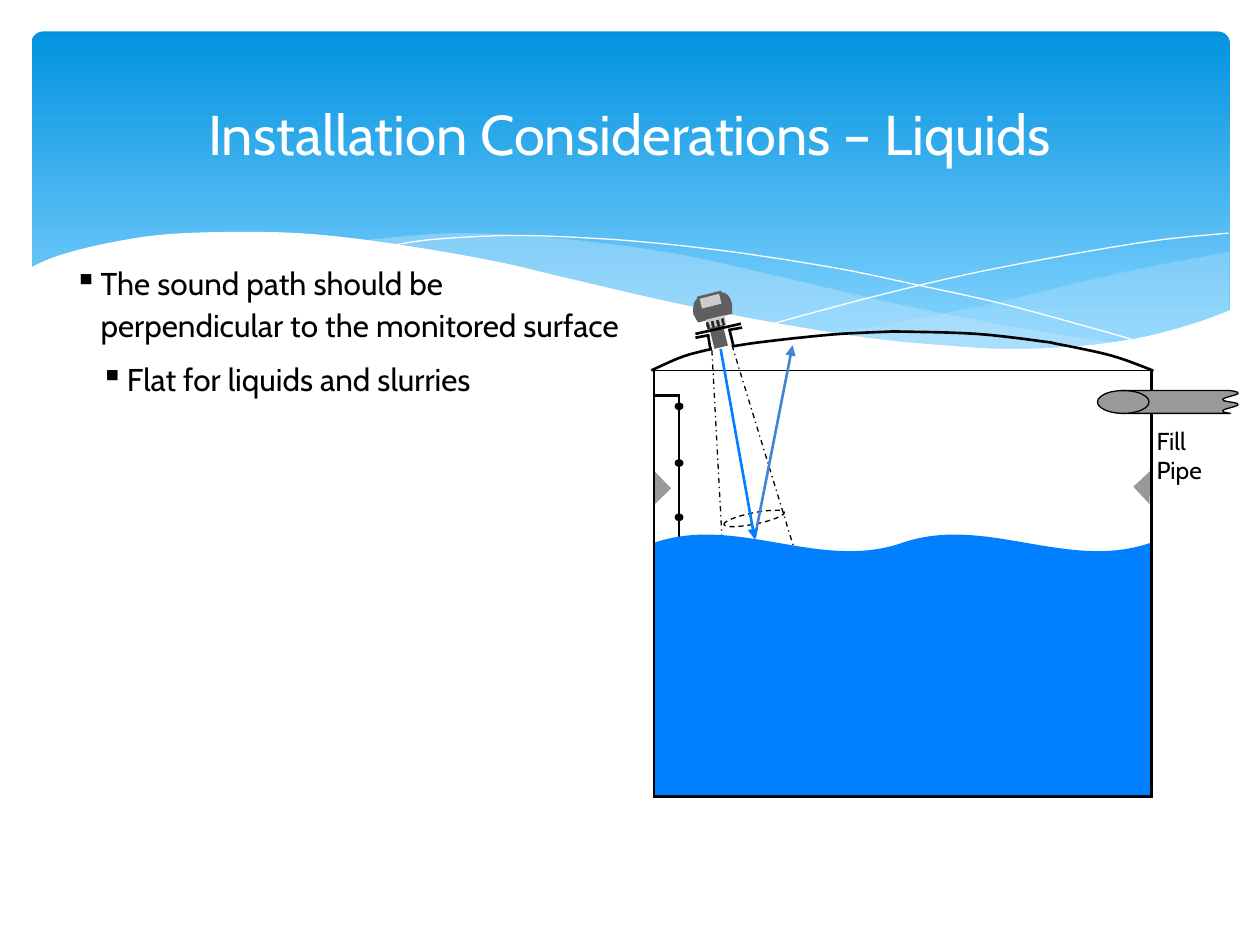
"""Build a slide on mounting a level sensor above a liquid tank."""
from copy import deepcopy
from dataclasses import dataclass

from lxml import etree
from pptx import Presentation
from pptx.dml.color import RGBColor
from pptx.enum.dml import MSO_LINE
from pptx.enum.shapes import MSO_CONNECTOR, MSO_SHAPE
from pptx.enum.text import MSO_ANCHOR, PP_ALIGN
from pptx.oxml.ns import qn
from pptx.util import Pt

RECT, ROUND = MSO_SHAPE.RECTANGLE, MSO_SHAPE.ROUNDED_RECTANGLE
OVAL, WAVE = MSO_SHAPE.OVAL, MSO_SHAPE.DOUBLE_WAVE
WEDGE = MSO_SHAPE.RIGHT_TRIANGLE
STRAIGHT = MSO_CONNECTOR.STRAIGHT
DASH, DASH_DOT = MSO_LINE.DASH, MSO_LINE.DASH_DOT
MIDDLE, TOP = MSO_ANCHOR.MIDDLE, MSO_ANCHOR.TOP
CENTER, LEFT = PP_ALIGN.CENTER, PP_ALIGN.LEFT


@dataclass(frozen=True)
class Theme:
    """Hold the colours, font, type sizes and line widths."""
    font: str = "Cabin"
    title: int = 32
    body: int = 18
    label: int = 14
    thin: float = 0.75
    thick: float = 1.5
    white: str = "FFFFFF"
    black: str = "000000"
    haze: str = "C6E7FC"
    housing: str = "5F5F5F"
    display: str = "CCCCCC"
    steel: str = "999999"
    liquid: str = "0080FF"
    echo: str = "4584D3"
    sky: tuple = ((0, "0293E0"), (0.9, "83D3FE"))
    metal: tuple = ((0, "DDDDDD"), (0.5, "1C1C1C"), (1, "DDDDDD"))


THEME = Theme()
TILT = 345.9
HAZE_RIGHT = (
    [(475.9, 190.8), (508.3, 185), (542.2, 178.6), (579.6, 170.6), (619.9, 160.6), (663.1, 151.2), (702.4, 144)],
    [(702.4, 177.8), (693.4, 181.4), (668.2, 189.4), (645.8, 193.7), (614.9, 198), (578.2, 200.2),
     (545, 198.7), (507.6, 195.1), (475.9, 190.8)])
HAZE_MIDDLE = (
    [(205.9, 137.5), (236, 134.6), (259.9, 133.2), (287.3, 133.9), (318.2, 136.1), (361.4, 141.1),
     (399.6, 147.6), (452.9, 159.8), (508.3, 172.8), (558, 182.9), (602.6, 190.8), (643, 196.6)],
    [(643, 196.6), (617, 199.4), (581, 200.2), (538.6, 198.7), (489.6, 193), (432.7, 183.6),
     (381.6, 172.8), (323.3, 159.8), (275.8, 149), (232.6, 141.1), (205.9, 137.5)])
FALLING_LINE = [(222.5, 140.4), (247.7, 136.8), (288.7, 134.6), (324, 135.4), (367.2, 138.2), (419, 144),
                (478.8, 153.4), (523.4, 162.7), (572.4, 173.5), (625.7, 187.9), (653, 195.8)]
RISING_LINE = [(441.4, 185), (500.4, 169.2), (558.7, 155.5), (623.5, 143.3), (665.3, 136.8), (702, 133.2)]
PAGE_EDGE = [(16.5, 153.4), (33.1, 146.2), (61.2, 139), (95, 133.9), (139, 132.5), (180, 133.9),
             (227.5, 139.7), (281.5, 149), (321.8, 158.4), (380.9, 172.1), (434.2, 182.9), (495.4, 193),
             (547.9, 198), (582.5, 199.4), (621.4, 197.3), (655.2, 192.2), (684, 184.3), (703.4, 177.1)]
ROOF = ([(372.2, 211.7), (390.2, 203.8), (406.8, 199.4)],
        [(418.3, 198), (432.7, 195.8), (456.5, 193)],
        [(456.5, 193), (480.2, 190.8), (510.5, 189.4)],
        [(509, 189.4), (558, 190.8), (601.2, 195.8)],
        [(600.5, 195.8), (634.3, 203), (658.8, 211.7)])


def smooth(points, steps=6):
    """Return points along a Catmull-Rom curve through the given ones."""
    ends = [points[0], *points, points[-1]]
    curve = [points[0]]
    for a, b, c, d in zip(ends, ends[1:], ends[2:], ends[3:]):
        for step in range(1, steps + 1):
            t = step / steps
            curve.append(tuple(
                (2 * q + (r - p) * t + (2 * p - 5 * q + 4 * r - s) * t ** 2
                 + (3 * q - p - 3 * r + s) * t ** 3) / 2
                for p, q, r, s in zip(a, b, c, d)))
    return curve


def paint(shape, fill=None, line=None, width=THEME.thin, dash=None, alpha=None):
    """Give a shape its fill and outline, without a shadow."""
    shape.shadow.inherit = False
    if fill is None:
        shape.fill.background()
    elif isinstance(fill, str):
        shape.fill.solid()
        shape.fill.fore_color.rgb = RGBColor.from_string(fill)
    else:
        shape.fill.gradient()
        stop_list = shape._element.spPr.find(".//" + qn("a:gsLst"))
        for _ in fill[2:]:
            stop_list.append(deepcopy(stop_list[-1]))
        for stop, (position, color) in zip(shape.fill.gradient_stops, fill):
            stop.position = position
            stop.color.rgb = RGBColor.from_string(color)
    if alpha:
        color = shape._element.spPr.find(qn("a:solidFill"))[0]
        etree.SubElement(color, qn("a:alpha"), val=str(alpha * 1000))
    if line:
        ink(shape.line, line, width, dash)
    else:
        shape.line.fill.background()


def ink(line, color, width, dash):
    """Set the colour, width and dash of a line."""
    line.color.rgb = RGBColor.from_string(color)
    line.width = Pt(width)
    if dash:
        line.dash_style = dash


def add_preset(page, kind, box, turn=0, adjust=(), **style):
    """Add a preset shape."""
    shape = page.shapes.add_shape(kind, *map(Pt, box))
    shape.rotation = turn
    for index, value in enumerate(adjust):
        shape.adjustments[index] = value
    paint(shape, **style)


def add_outline(page, points, closed=True, **style):
    """Add a freeform through the points."""
    start, *rest = [(Pt(x), Pt(y)) for x, y in points]
    builder = page.shapes.build_freeform(*start, scale=1.0)
    builder.add_line_segments(rest, close=closed)
    paint(builder.convert_to_shape(), **style)


def add_line(page, start, end, color=THEME.black, width=THEME.thick, dash=None, arrow=False):
    """Add a straight connector."""
    connector = page.shapes.add_connector(STRAIGHT, *map(Pt, (*start, *end)))
    ink(connector.line, color, width, dash)
    if arrow:
        etree.SubElement(connector.line._get_or_add_ln(), qn("a:tailEnd"), type="triangle")
    etree.SubElement(connector._element.spPr, qn("a:effectLst"))


def add_text(page, box, lines, size, color, inset=None, anchor=TOP, bullets=False, **formats):
    """Add a wrapped text box with optional stepped bullets."""
    frame = page.shapes.add_textbox(*map(Pt, box)).text_frame
    settings = {"word_wrap": True, "vertical_anchor": anchor}
    if inset is not None:
        settings.update({f"margin_{side}": Pt(inset) for side in ("left", "top", "right", "bottom")})
    for name, value in settings.items():
        setattr(frame, name, value)
    for index, text in enumerate(lines):
        para = frame.add_paragraph() if index else frame.paragraphs[0]
        if bullets:
            properties = para._p.get_or_add_pPr()
            properties.set("marL", str(Pt(15 * (index + 1))))
            properties.set("indent", str(Pt(-15)))
            tint = etree.SubElement(properties, qn("a:buClr"))
            etree.SubElement(tint, qn("a:srgbClr"), val=color)
            etree.SubElement(properties, qn("a:buChar"), char="▪")
        for name, value in formats.items():
            setattr(para, name, value)
        span = para.add_run()
        span.text = text
        for name, value in {"name": THEME.font, "size": Pt(size)}.items():
            setattr(span.font, name, value)
        span.font.color.rgb = RGBColor.from_string(color)


def add_header(page):
    """Draw the blue banner with its waves."""
    add_preset(page, ROUND, (18, 18, 684.7, 194.4), adjust=[0.034], fill=THEME.sky)
    banner = page.shapes[-1]
    banner.fill.gradient_angle = 270
    for (upper, lower), alpha in ((HAZE_RIGHT, 29), (HAZE_MIDDLE, 40)):
        add_outline(page, smooth(upper) + smooth(lower), fill=THEME.haze, alpha=alpha)
    for points in (FALLING_LINE, RISING_LINE):
        add_outline(page, smooth(points), closed=False, line=THEME.white, width=0)
    add_outline(page, smooth(PAGE_EDGE) + [(703.4, 236.9), (16.5, 236.9)], fill=THEME.white)


def add_sensor(page):
    """Draw the tilted sensor and its nozzle."""
    add_preset(page, RECT, (406.1, 181.4, 7.9, 17.3), TILT, fill=THEME.housing)
    add_outline(page, [(396, 179.3), (398.9, 184.3), (418.3, 179.3), (418.3, 173.5)], fill=THEME.housing)
    add_preset(page, RECT, (403.9, 181.4, 10.8, 5), TILT, fill=THEME.display)
    for rib in range(4):
        add_preset(page, RECT, (403.9 + 2.9 * rib, 184.3 - 0.7 * rib, 1.4, 3.6), TILT, fill=THEME.metal)
        page.shapes[-1].fill.gradient_angle = 0
    add_outline(page, [(418.3, 173.5), (416.9, 169.9), (396, 175.7), (396, 179.3)], fill=THEME.housing)
    add_preset(page, ROUND, (396, 168.5, 21.6, 10.1), TILT, [0.5], fill=THEME.housing)
    add_preset(page, RECT, (400.3, 169.2, 11.5, 5.8), TILT, fill=THEME.display)
    add_preset(page, ROUND, (398.2, 167.8, 14.4, 1.4), TILT, [0.3], fill=THEME.housing)
    for start, end in (((397.4, 190.8), (423.4, 185)), ((397.4, 193), (405.4, 191.5)),
                       ((416.2, 188.6), (424.1, 187.2)), ((404.6, 191.5), (406.1, 200.2)),
                       ((416.9, 188.6), (419, 197.3))):
        add_line(page, start, end)


def add_tank(page):
    """Draw the tank, its fittings, the liquid and the sound path."""
    add_line(page, (373, 211.7), (659.5, 211.7), width=THEME.thin)
    for points in ROOF:
        add_outline(page, smooth(points), closed=False, line=THEME.black, width=THEME.thick)
    add_line(page, (373.7, 455), (658.8, 455))
    for start, end in (((406.8, 200.2), (419.8, 441.4)), ((418.3, 197.3), (488.9, 428.4))):
        add_line(page, start, end, width=THEME.thin, dash=DASH_DOT)
    add_preset(page, OVAL, (413.3, 293, 35.3, 6.5), 348.7, line=THEME.black, dash=DASH)
    add_line(page, (388.1, 225.4), (388.1, 443.5))
    add_line(page, (388.8, 226.1), (373.7, 226.1))
    for top in (293.8, 262.8, 230.4):
        add_preset(page, OVAL, (385.9, top, 4.3, 3.6), fill=THEME.black, line=THEME.black)
    for left, turn in ((367.2, 225.9), (650.2, 47)):
        add_preset(page, WEDGE, (left, 272.2, 13.7, 13), turn, fill=THEME.steel)
    add_preset(page, WAVE, (373.7, 305.3, 283.7, 75.6), adjust=(0.065, 0), fill=THEME.liquid)
    add_preset(page, RECT, (374.4, 362.2, 284.4, 92.2), fill=THEME.liquid)
    add_line(page, (431.3, 307.4), (452.9, 197.3), THEME.echo, arrow=True)
    for wall in (658.1, 373.7):
        add_line(page, (wall, 211.7), (wall, 455.8))
    add_preset(page, WAVE, (665.3, 193.7, 13, 72), 270, (0.065, 0), fill=THEME.steel, line=THEME.black)
    add_preset(page, OVAL, (627.1, 223.2, 29.5, 13), fill=THEME.steel, line=THEME.black)
    add_line(page, (411.8, 199.4), (431.3, 308.2), THEME.liquid, arrow=True)


def main():
    """Build and save the deck."""
    deck = Presentation()
    deck.slide_width, deck.slide_height = Pt(720), Pt(540)
    page = deck.slides.add_slide(deck.slide_layouts[6])
    add_header(page)
    add_sensor(page)
    add_tank(page)
    add_text(page, (42.5, 149, 316.8, 344),
             ["The sound path should be perpendicular to the monitored surface", "Flat for liquids and slurries"],
             THEME.body, THEME.black, inset=0, bullets=True, line_spacing=1.1, space_after=Pt(7))
    add_text(page, (36, 26.6, 648, 98.6), ["Installation Considerations – Liquids"],
             THEME.title, THEME.white, anchor=MIDDLE, alignment=CENTER)
    add_text(page, (653.8, 239.8, 59.8, 24.5), ["Fill Pipe"], THEME.label, THEME.black, alignment=LEFT)
    deck.save("out.pptx")


if __name__ == "__main__":
    main()
